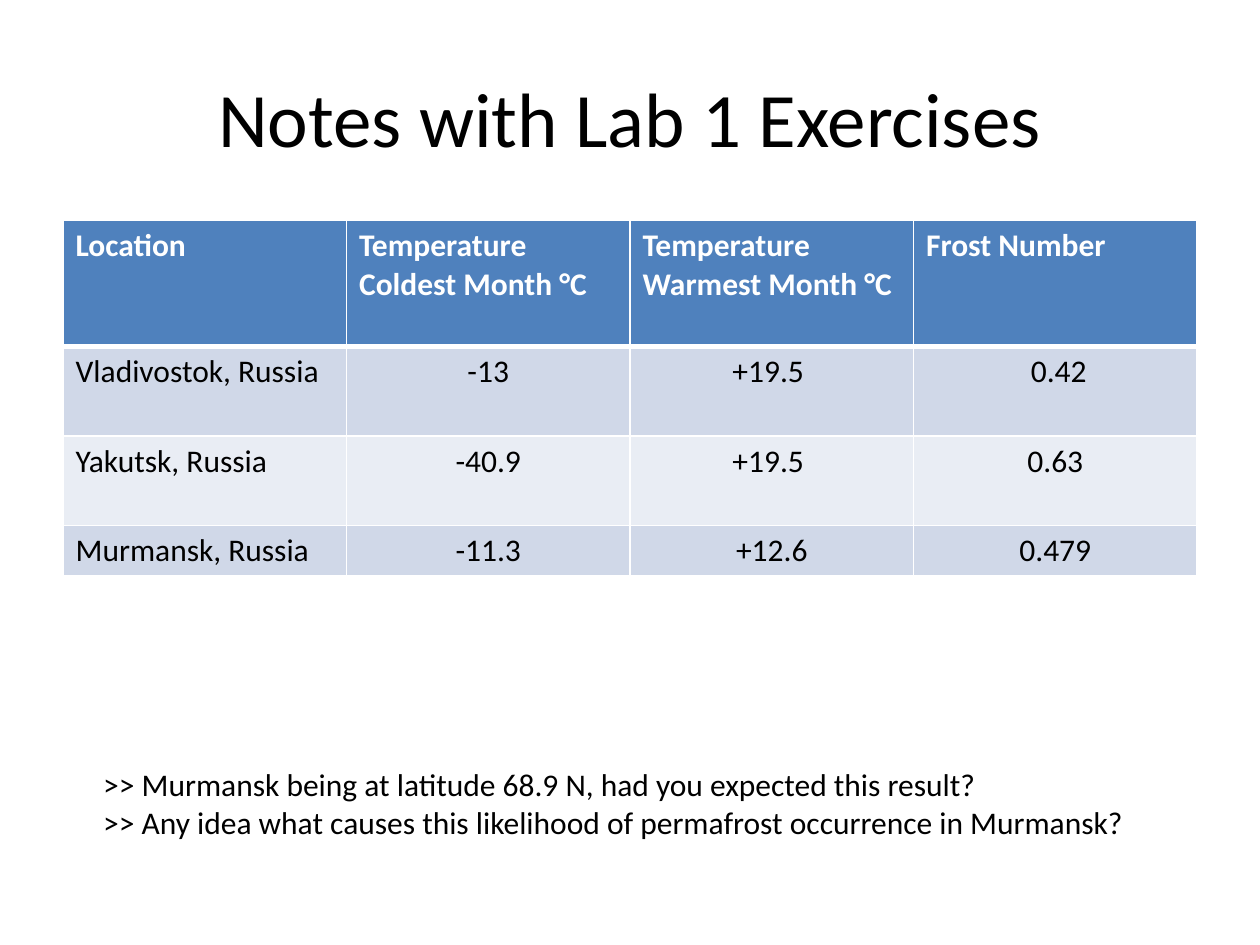
from lxml import etree
from pptx import Presentation
from pptx.dml.color import RGBColor
from pptx.enum.text import MSO_ANCHOR, PP_ALIGN
from pptx.oxml.ns import qn
from pptx.util import Inches, Pt

LEFT, CENTER = PP_ALIGN.LEFT, PP_ALIGN.CENTER
MIDDLE = MSO_ANCHOR.MIDDLE
BLACK = RGBColor(0x00, 0x00, 0x00)
WHITE = RGBColor(0xFF, 0xFF, 0xFF)
BLUE = RGBColor(0x4F, 0x81, 0xBD)
BAND_DARK = RGBColor(0xD0, 0xD8, 0xE8)
BAND_LIGHT = RGBColor(0xE9, 0xED, 0xF4)
FONT = "Calibri"

TITLE = "Notes with Lab 1 Exercises"
ROWS = [
    ("Location", "Temperature\nColdest Month °C", "Temperature\nWarmest Month °C", "Frost Number"),
    ("Vladivostok, Russia", "-13", "+19.5 ", " 0.42"),
    ("Yakutsk, Russia", "-40.9", "+19.5 ", "0.63"),
    ("Murmansk, Russia", "-11.3", "+12.6", "0.479"),
]
ROW_HEIGHTS = [1, 0.71, 0.71, 0.4]
QUESTIONS = (
    ">> Murmansk being at latitude 68.9 N, had you expected this result?\n"
    ">> Any idea what causes this likelihood of permafrost occurrence in Murmansk?"
)


def write_text(frame, text, size, color=BLACK, bold=False, align=LEFT):
    """Fill a text frame and format every run alike."""
    frame.text = text
    for para in frame.paragraphs:
        para.alignment = align
        for span in para.runs:
            span.font.name = FONT
            span.font.size = Pt(size)
            span.font.color.rgb = color
            span.font.bold = bold


def add_border(cell, side, width):
    """Draw one white edge of a table cell."""
    line = etree.SubElement(cell._tc.get_or_add_tcPr(), qn(f"a:ln{side}"), w=str(Pt(width)))
    fill = etree.SubElement(line, qn("a:solidFill"))
    etree.SubElement(fill, qn("a:srgbClr"), val=str(WHITE))


def add_title(page, box):
    """Place the centred slide title."""
    frame = page.shapes.add_textbox(*map(Inches, box)).text_frame
    frame.word_wrap = True
    frame.vertical_anchor = MIDDLE
    write_text(frame, TITLE, 44, align=CENTER)


def add_frost_table(page, box):
    """Place the table of temperatures and frost numbers."""
    table = page.shapes.add_table(len(ROWS), len(ROWS[0]), *map(Inches, box)).table
    for row_index, values in enumerate(ROWS):
        table.rows[row_index].height = Inches(ROW_HEIGHTS[row_index])
        header = row_index == 0
        band = BAND_DARK if row_index % 2 else BAND_LIGHT
        for column_index, value in enumerate(values):
            cell = table.cell(row_index, column_index)
            for side in "LRTB":
                thick = (header and side == "B") or (row_index == 1 and side == "T")
                add_border(cell, side, 3 if thick else 1)
            cell.fill.solid()
            cell.fill.fore_color.rgb = BLUE if header else band
            align = LEFT if header or column_index == 0 else CENTER
            write_text(cell.text_frame, value, 18, WHITE if header else BLACK, header, align)


def add_questions(page, box):
    """Place the two discussion questions."""
    frame = page.shapes.add_textbox(*map(Inches, box)).text_frame
    frame.word_wrap = False
    write_text(frame, QUESTIONS, 18)


def main():
    """Build and save the deck."""
    deck = Presentation()
    deck.slide_width, deck.slide_height = Inches(10), Inches(7.5)
    page = deck.slides.add_slide(deck.slide_layouts[6])
    add_title(page, (0.5, 0.3, 9, 1.25))
    add_frost_table(page, (0.5, 1.75, 9, sum(ROW_HEIGHTS)))
    add_questions(page, (0.72, 6.02, 8.51, 0.71))
    deck.save("out.pptx")


if __name__ == "__main__":
    main()
